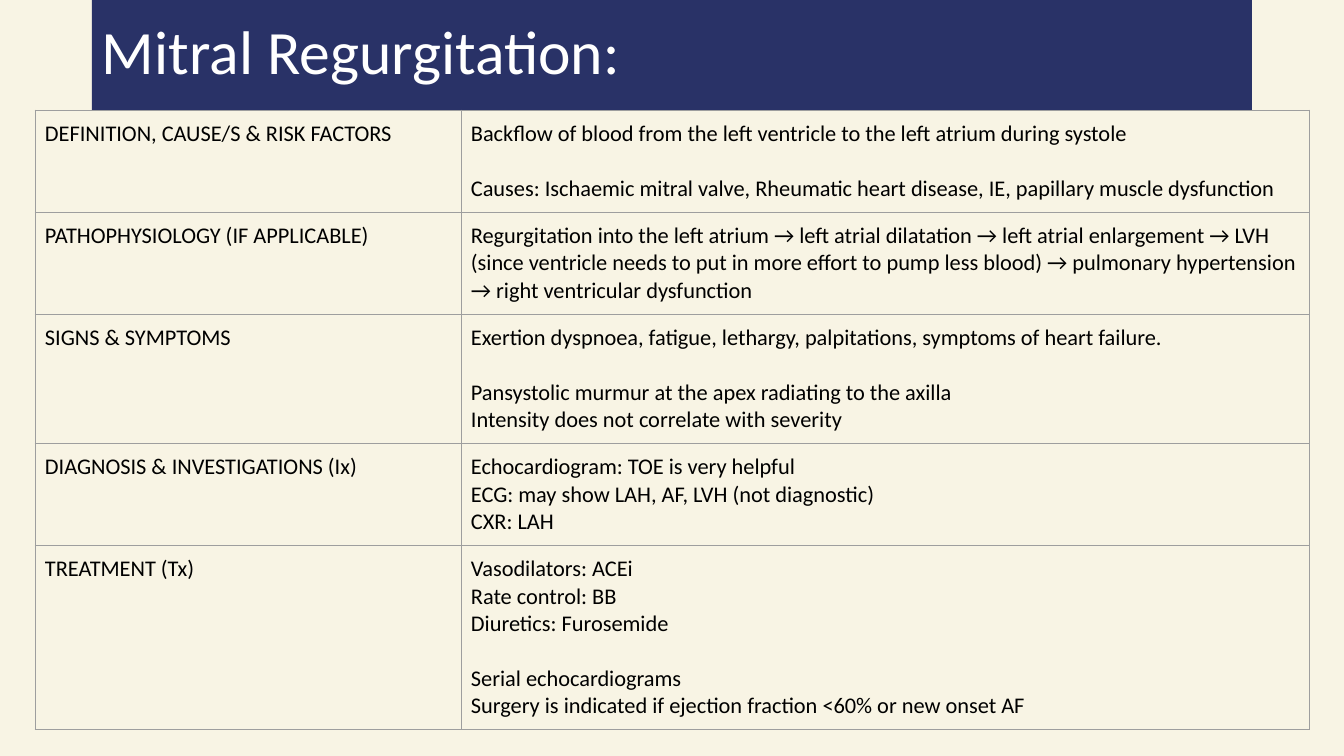
"""Build a one-slide summary table on mitral regurgitation."""
from lxml.etree import SubElement
from pptx import Presentation
from pptx.dml.color import RGBColor
from pptx.enum.text import MSO_ANCHOR, PP_ALIGN
from pptx.oxml.ns import qn
from pptx.util import Emu, Pt

TITLE = "Mitral Regurgitation:"
# Each row: heading, number of text lines, groups of paragraphs
ROWS = [
    ("DEFINITION, CAUSE/S & RISK FACTORS", 3, [
        ["Backflow of blood from the left ventricle to the left atrium during systole"],
        ["Causes: Ischaemic mitral valve, Rheumatic heart disease, IE, papillary muscle dysfunction"],
    ]),
    ("PATHOPHYSIOLOGY (IF APPLICABLE)", 3, [
        ["Regurgitation into the left atrium → left atrial dilatation → left atrial enlargement → LVH "
         "(since ventricle needs to put in more effort to pump less blood) → pulmonary hypertension "
         "→ right ventricular dysfunction"],
    ]),
    ("SIGNS & SYMPTOMS", 4, [
        ["Exertion dyspnoea, fatigue, lethargy, palpitations, symptoms of heart failure."],
        ["Pansystolic murmur at the apex radiating to the axilla",
         "Intensity does not correlate with severity"],
    ]),
    ("DIAGNOSIS & INVESTIGATIONS (Ix)", 3, [
        ["Echocardiogram: TOE is very helpful",
         "ECG: may show LAH, AF, LVH (not diagnostic)",
         "CXR: LAH"],
    ]),
    ("TREATMENT (Tx)", 6, [
        ["Vasodilators: ACEi", "Rate control: BB", "Diuretics: Furosemide"],
        ["Serial echocardiograms",
         "Surgery is indicated if ejection fraction <60% or new onset AF"],
    ]),
]
COLORS = {"page": "F8F4E4", "banner": "293267", "title": "FFFFFF", "text": "000000", "border": "9E9E9E"}
FONT = "Calibri"
COLUMNS = (426, 849)
LINE, INSET = 27, 10
GROUP_GAP = Pt(19.5)


def px(length):
    return Emu(round(length * 914400 / 100.8))


def rgb(name):
    return RGBColor.from_string(COLORS[name])


def add_span(para, text, size, color):
    span = para.add_run()
    span.text = text
    span.font.name, span.font.size = FONT, Pt(size)
    span.font.color.rgb = rgb(color)


def fill_cell(cell, groups):
    cell.fill.background()
    cell.margin_left = cell.margin_right = cell.margin_top = cell.margin_bottom = px(INSET)
    frame = cell.text_frame
    for group_no, group in enumerate(groups):
        for line_no, text in enumerate(group):
            first = group_no == line_no == 0
            para = frame.paragraphs[0] if first else frame.add_paragraph()
            if group_no and line_no == 0:
                para.space_before = GROUP_GAP
            add_span(para, text, 16, "text")
    props = cell._tc.get_or_add_tcPr()
    for index, side in enumerate(("lnL", "lnR", "lnT", "lnB")):
        border = SubElement(props, qn(f"a:{side}"), w=str(Pt(0.75)))
        solid = SubElement(border, qn("a:solidFill"))
        SubElement(solid, qn("a:srgbClr"), val=COLORS["border"])
        props.insert(index, border)


def add_title(page):
    title = page.shapes.title
    title.left, title.top, title.width, title.height = px(92), px(0), px(1160), px(110)
    title.fill.solid()
    title.fill.fore_color.rgb = rgb("banner")
    frame = title.text_frame
    frame.word_wrap = True
    frame.vertical_anchor = MSO_ANCHOR.MIDDLE
    frame.margin_left = frame.margin_right = px(10)
    frame.margin_top = frame.margin_bottom = px(5)
    para = frame.paragraphs[0]
    para.alignment, para.line_spacing = PP_ALIGN.LEFT, 0.9
    add_span(para, TITLE, 44, "title")


def add_summary(page):
    heights = [lines * LINE + 2 * INSET for _, lines, _ in ROWS]
    table = page.shapes.add_table(len(ROWS), len(COLUMNS), px(35), px(110),
                                  px(sum(COLUMNS)), px(sum(heights))).table
    table.first_row = table.horz_banding = False
    for column, width in zip(table.columns, COLUMNS):
        column.width = px(width)
    for row, height, (heading, _, groups) in zip(table.rows, heights, ROWS):
        row.height = px(height)
        fill_cell(row.cells[0], [[heading]])
        fill_cell(row.cells[1], groups)


def main():
    deck = Presentation()
    deck.slide_width, deck.slide_height = px(1344), px(756)
    page = deck.slides.add_slide(deck.slide_layouts[5])
    page.background.fill.solid()
    page.background.fill.fore_color.rgb = rgb("page")
    add_title(page)
    add_summary(page)
    deck.save("out.pptx")


if __name__ == "__main__":
    main()
